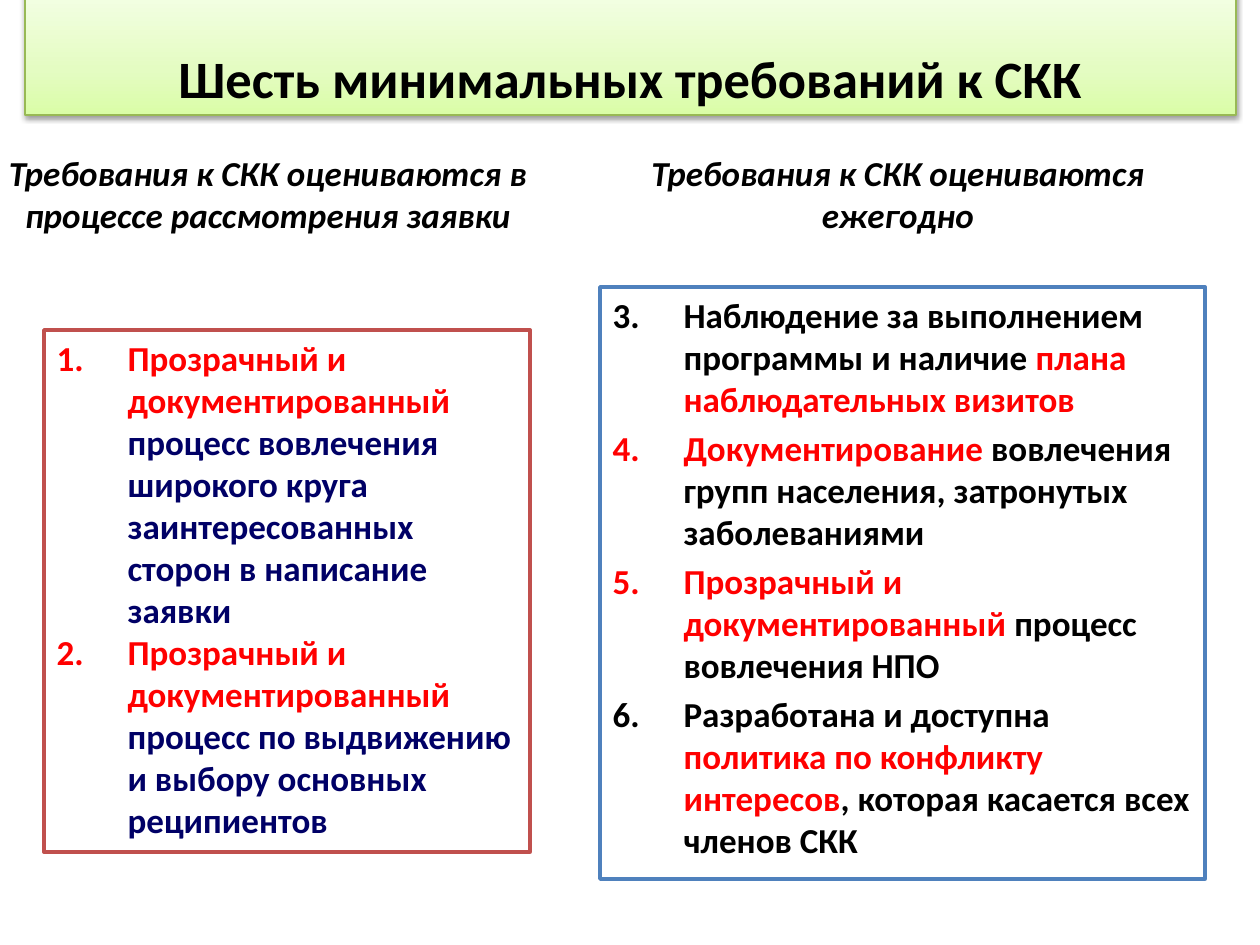
"""Build the slide on the six minimum requirements for a coordinating committee."""
from copy import deepcopy

from lxml.etree import SubElement
from pptx import Presentation
from pptx.dml.color import RGBColor
from pptx.enum.text import MSO_ANCHOR, MSO_AUTO_SIZE, PP_ALIGN
from pptx.oxml.ns import qn
from pptx.util import Pt

BLACK, RED, NAVY = "000000", "FF0000", "000066"

HEADING = "Шесть минимальных требований к СКК"
HEADING_BOX = (25, -14, 1211, 129)
GRADIENT = [(0, "DAFDA7"), (0.35, "E4FCC2"), (1, "F5FFE7")]

CAPTIONS = [
    (1, (-5, 145, 546, 97), "Требования к СКК оцениваются в процессе рассмотрения заявки"),
    (3, (610, 145, 576, 136), "Требования к СКК оцениваются ежегодно"),
]

LISTS = [
    dict(idx=2, box=(44, 330, 486, 522), border="C0504D", start=1, gap=0, items=[
        [("Прозрачный и документированный ", RED),
         ("процесс вовлечения широкого круга заинтересованных сторон в написание заявки", NAVY)],
        [("Прозрачный и документированный ", RED),
         ("процесс по выдвижению и выбору основных реципиентов", NAVY)],
    ]),
    dict(idx=4, box=(600, 287, 605, 592), border="4F81BD", start=3, gap=4, items=[
        [("Наблюдение за выполнением программы и наличие ", BLACK),
         ("плана наблюдательных визитов", RED)],
        [("Документирование ", RED),
         ("вовлечения групп населения, затронутых заболеваниями", BLACK)],
        [("Прозрачный и документированный ", RED), ("процесс вовлечения НПО", BLACK)],
        [("Разработана и доступна", BLACK), (" политика по конфликту интересов", RED),
         (", которая касается всех членов СКК", BLACK)],
    ]),
]

HEADING_FONT = dict(name="Calibri", size=Pt(30), bold=True)
LIST_FONT = dict(name="Calibri", size=Pt(20), bold=True)
CAPTION_FONT = dict(LIST_FONT, italic=True)


def px(length):
    return round(length * 914400 / 126)


def rgb(value):
    return RGBColor.from_string(value)


def apply(target, values):
    for key, value in values.items():
        setattr(target, key, value)


def place(holder, box, anchor=MSO_ANCHOR.TOP):
    apply(holder, dict(zip(("left", "top", "width", "height"), map(px, box))))
    apply(holder.text_frame, dict(word_wrap=True, auto_size=MSO_AUTO_SIZE.NONE,
                                  vertical_anchor=anchor))


def outline(holder, color, width):
    holder.line.color.rgb = rgb(color)
    holder.line.width = Pt(width)


def write(paragraph, runs, font, align=PP_ALIGN.LEFT, gap=0):
    apply(paragraph, dict(alignment=align, space_before=Pt(gap)))
    for words, color in runs:
        run = paragraph.add_run()
        run.text = words
        apply(run.font, font)
        run.font.color.rgb = rgb(color)


def number(paragraph, start):
    properties = paragraph._p.get_or_add_pPr()
    properties.set("marL", str(px(71)))
    properties.set("indent", str(-px(71)))
    SubElement(properties, qn("a:buFont"), typeface="+mj-lt")
    SubElement(properties, qn("a:buAutoNum"), type="arabicPeriod", startAt=str(start))


def add_heading(heading):
    place(heading, HEADING_BOX, MSO_ANCHOR.BOTTOM)
    apply(heading.text_frame, dict(margin_left=0, margin_right=0))
    write(heading.text_frame.paragraphs[0], [(HEADING, BLACK)], HEADING_FONT, PP_ALIGN.CENTER)
    heading.fill.gradient()
    heading.fill.gradient_angle = 90
    stop_list = heading.element.spPr.find(".//" + qn("a:gsLst"))
    stop_list.append(deepcopy(stop_list[0]))
    for stop, (position, color) in zip(heading.fill.gradient_stops, GRADIENT):
        stop.position = position
        stop.color.rgb = rgb(color)
    outline(heading, "98B955", 0.75)
    heading.shadow.inherit = False
    effects = heading.element.spPr.find(qn("a:effectLst"))
    shadow = SubElement(effects, qn("a:outerShdw"), blurRad="40000", dist="20000",
                        dir="5400000", rotWithShape="0")
    shade = SubElement(shadow, qn("a:srgbClr"), val=BLACK)
    SubElement(shade, qn("a:alpha"), val="38000")


def add_list(holder, content):
    place(holder, content["box"])
    holder.fill.solid()
    holder.fill.fore_color.rgb = rgb("FFFFFF")
    outline(holder, content["border"], 2)
    frame = holder.text_frame
    for position, runs in enumerate(content["items"]):
        paragraph = frame.add_paragraph() if position else frame.paragraphs[0]
        write(paragraph, runs, LIST_FONT, gap=content["gap"])
        number(paragraph, content["start"])


def main():
    deck = Presentation()
    apply(deck, dict(slide_width=px(1260), slide_height=px(945)))
    slide = deck.slides.add_slide(deck.slide_layouts.get_by_name("Comparison"))
    holders = {holder.placeholder_format.idx: holder for holder in slide.placeholders}
    add_heading(slide.shapes.title)
    for idx, box, caption in CAPTIONS:
        place(holders[idx], box)
        write(holders[idx].text_frame.paragraphs[0], [(caption, BLACK)],
              CAPTION_FONT, PP_ALIGN.CENTER)
    for content in LISTS:
        add_list(holders[content["idx"]], content)
    deck.save("out.pptx")


if __name__ == "__main__":
    main()
